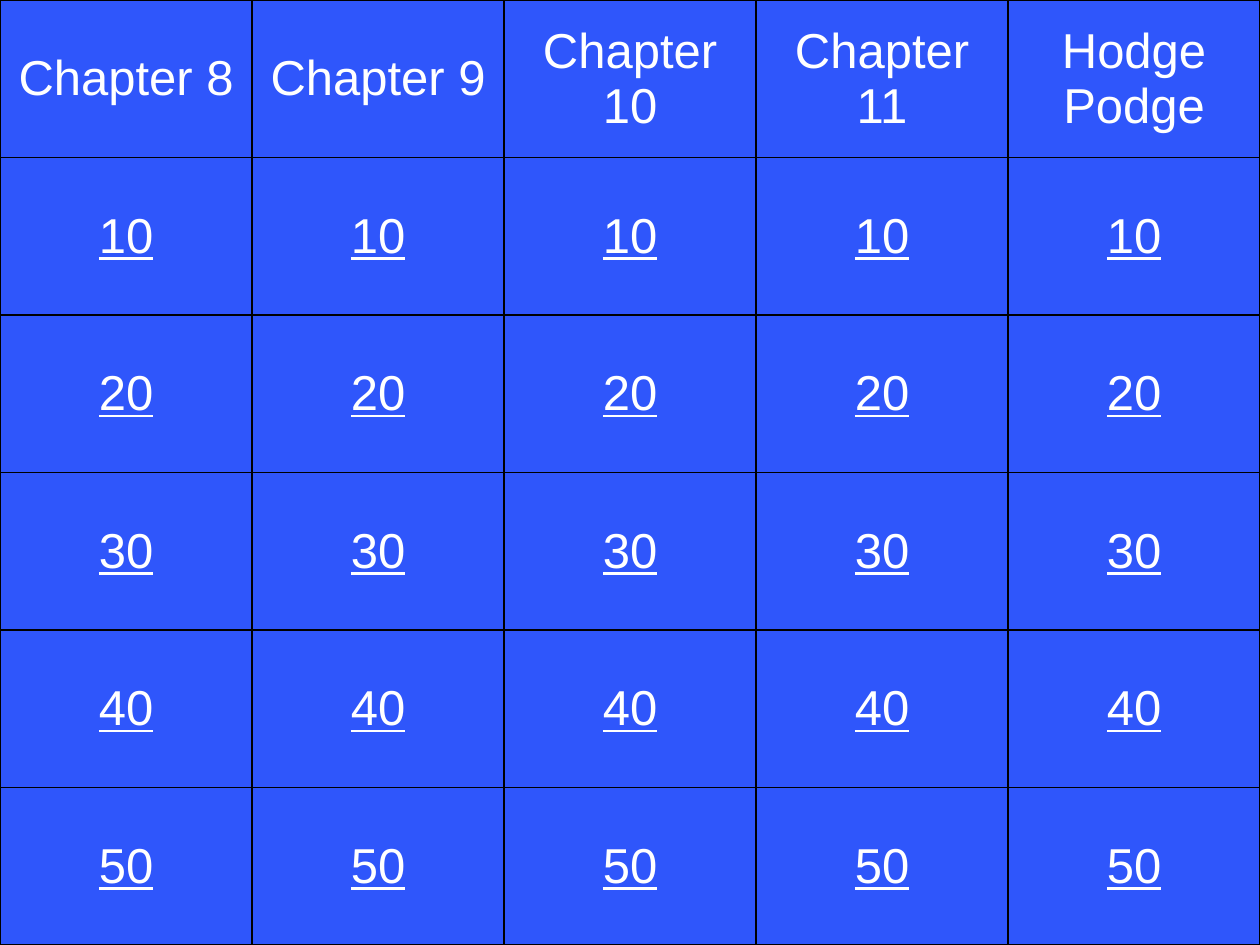
from lxml import etree
from pptx import Presentation
from pptx.dml.color import RGBColor
from pptx.enum.text import MSO_ANCHOR as Anchor, PP_ALIGN as Align
from pptx.oxml.ns import qn
from pptx.util import Cm, Pt

COLORS = {"board": "2F56FB", "text": "FFFFFF", "grid": "000000"}
WIDTH, HEIGHT = 25.4, 19.05
CATEGORIES = ["Chapter 8", "Chapter 9", "Chapter 10", "Chapter 11", "Hodge Podge"]
POINTS = [10, 20, 30, 40, 50]


def write_text(text_frame, text, *, font="Arial", size=28, color="text",
               underline=False, align=Align.CENTER):
    paragraph = text_frame.paragraphs[0]
    paragraph.alignment = align
    run = paragraph.add_run()
    run.text = text
    run.font.name = font
    run.font.size = Pt(size)
    run.font.underline = underline
    run.font.color.rgb = RGBColor.from_string(COLORS[color])


class BoardBuilder:
    """Holds the grid style and the current slide."""

    def __init__(self, slide, border_color="grid", border_width=1):
        self.slide = slide
        self.border_color = border_color
        self.border_width = border_width

    def background(self, color):
        fill = self.slide.background.fill
        fill.solid()
        fill.fore_color.rgb = RGBColor.from_string(COLORS[color])

    def border(self, cell):
        properties = cell._tc.get_or_add_tcPr()
        # Border lines come before the fill in the cell properties
        for index, side in enumerate(("a:lnL", "a:lnR", "a:lnT", "a:lnB")):
            line = etree.Element(qn(side), w=str(Pt(self.border_width)))
            fill = etree.SubElement(line, qn("a:solidFill"))
            etree.SubElement(fill, qn("a:srgbClr"), val=COLORS[self.border_color])
            properties.insert(index, line)

    def table(self, rows, left, top, width, height):
        row_count, column_count = len(rows), len(rows[0])
        frame = self.slide.shapes.add_table(
            row_count, column_count, Cm(left), Cm(top), Cm(width), Cm(height))
        table = frame.table
        table.first_row = table.horz_banding = False
        for column in table.columns:
            column.width = Cm(width / column_count)
        for row in table.rows:
            row.height = Cm(height / row_count)
        for row_index, texts in enumerate(rows):
            for column_index, text in enumerate(texts):
                cell = table.cell(row_index, column_index)
                cell.fill.background()
                cell.vertical_anchor = Anchor.MIDDLE
                self.border(cell)
                write_text(cell.text_frame, text, underline=row_index > 0)


def main():
    presentation = Presentation()
    presentation.slide_width, presentation.slide_height = Cm(WIDTH), Cm(HEIGHT)
    slide = presentation.slides.add_slide(presentation.slide_layouts[6])
    board = BoardBuilder(slide)

    # Blue board
    board.background("board")

    # Categories above the point values
    value_rows = [[str(value)] * len(CATEGORIES) for value in POINTS]
    board.table([CATEGORIES] + value_rows, 0, 0, WIDTH, HEIGHT)

    presentation.save("out.pptx")


if __name__ == "__main__":
    main()
